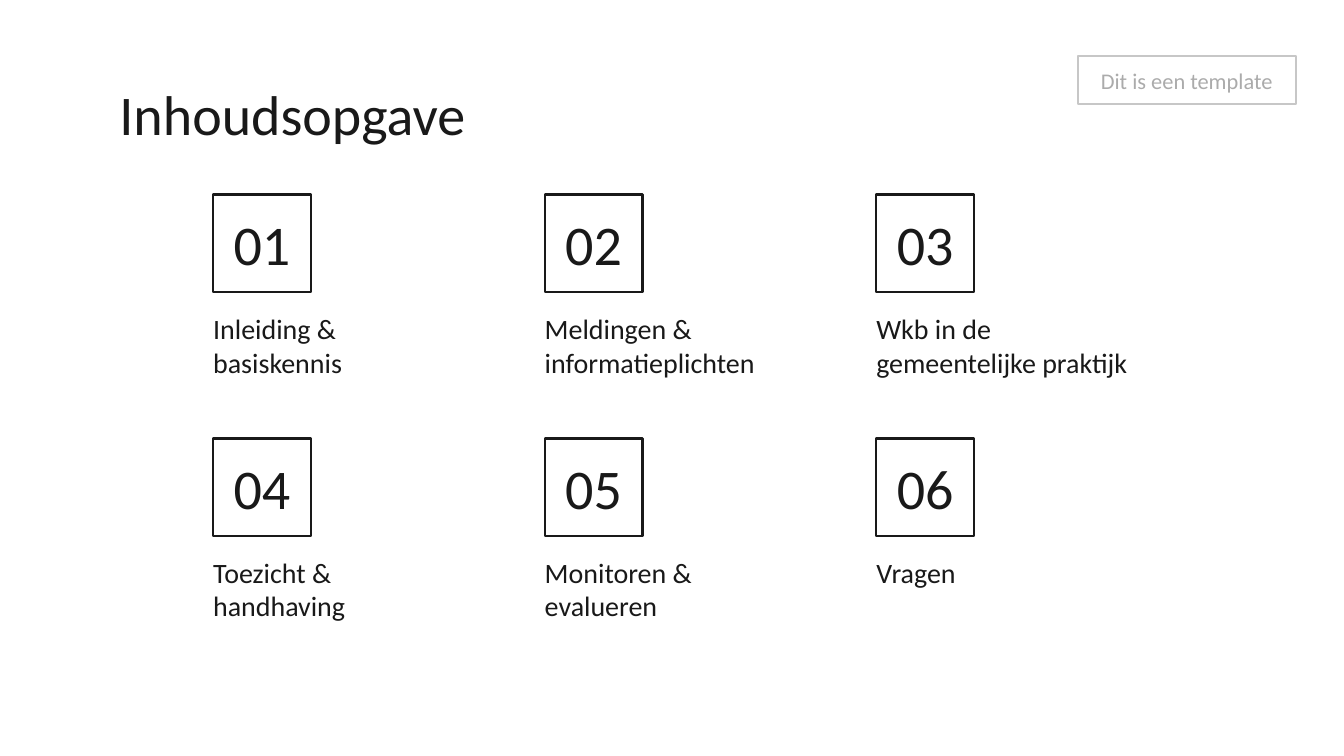
from pptx import Presentation
from pptx.dml.color import RGBColor
from pptx.enum.shapes import MSO_SHAPE as Shape
from pptx.enum.text import MSO_ANCHOR as Anchor, MSO_AUTO_SIZE as AutoSize, PP_ALIGN as Align
from pptx.util import Inches, Pt

WIDTH, HEIGHT = 26.67, 15
INK, TAG_LINE, TAG_TEXT = "191919", "C7C7C7", "ABABAB"
COLUMNS = 3
GRID_LEFT, GRID_TOP = 4.23, 3.86
COLUMN_STEP, ROW_STEP = 6.58, 4.84
BOX_SIDE, LABEL_OFFSET = 1.94, 2.32
LABEL_WIDTH, WIDE_LABEL, LABEL_HEIGHT = 5.05, 7.77, 2.14
CHAPTERS = [
    ("Inleiding & basiskennis", LABEL_WIDTH),
    ("Meldingen & informatieplichten", LABEL_WIDTH),
    ("Wkb in de\ngemeentelijke praktijk", WIDE_LABEL),
    ("Toezicht & handhaving", LABEL_WIDTH),
    ("Monitoren & evalueren", LABEL_WIDTH),
    ("Vragen", LABEL_WIDTH),
]


def color(value):
    return RGBColor.from_string(value)


def set_attributes(target, values):
    for name, value in values.items():
        setattr(target, name, value)


def write(shape, text, size, ink=INK, inset=0, align=Align.LEFT, anchor=Anchor.TOP):
    frame = shape.text_frame
    frame.text = text
    margins = ("margin_left", "margin_top", "margin_right", "margin_bottom")
    set_attributes(frame, dict.fromkeys(margins, Inches(inset)))
    set_attributes(frame, {"word_wrap": True, "auto_size": AutoSize.NONE,
                           "vertical_anchor": anchor})
    for paragraph in frame.paragraphs:
        paragraph.alignment = align
        for run in paragraph.runs:
            set_attributes(run.font, {"name": "Calibri", "size": Pt(size)})
            run.font.color.rgb = color(ink)


def add_title(slide, text):
    title = slide.shapes.title
    set_attributes(title, {"left": Inches(2.1), "top": Inches(1.3),
                           "width": Inches(8.16), "height": Inches(1.67)})
    write(title, text, 80, inset=0.27)


def add_outlined_box(slide, text, place, size, inset, line=INK, ink=INK):
    box = slide.shapes.add_shape(Shape.RECTANGLE, *map(Inches, place))
    box.shadow.inherit = False
    box.fill.background()
    box.line.color.rgb = color(line)
    box.line.width = Pt(3)
    write(box, text, size, ink, inset, Align.CENTER, Anchor.MIDDLE)


def add_label(slide, text, place):
    label = slide.shapes.add_textbox(*map(Inches, place))
    write(label, text, 40)


def add_chapter(slide, index, text, label_width):
    row, column = divmod(index, COLUMNS)
    left = GRID_LEFT + column * COLUMN_STEP
    top = GRID_TOP + row * ROW_STEP
    add_outlined_box(slide, f"{index + 1:02}", (left, top, BOX_SIDE, BOX_SIDE), 80, 0.31)
    add_label(slide, text, (left, top + LABEL_OFFSET, label_width, LABEL_HEIGHT))


def main():
    presentation = Presentation()
    set_attributes(presentation, {"slide_width": Inches(WIDTH),
                                  "slide_height": Inches(HEIGHT)})
    slide = presentation.slides.add_slide(presentation.slide_layouts[5])
    add_title(slide, "Inhoudsopgave")
    for index, (text, label_width) in enumerate(CHAPTERS):
        add_chapter(slide, index, text, label_width)
    add_outlined_box(slide, "Dit is een template", (21.39, 1.12, 4.32, 0.94), 32, 0.14,
                     TAG_LINE, TAG_TEXT)
    presentation.save("out.pptx")


if __name__ == "__main__":
    main()
